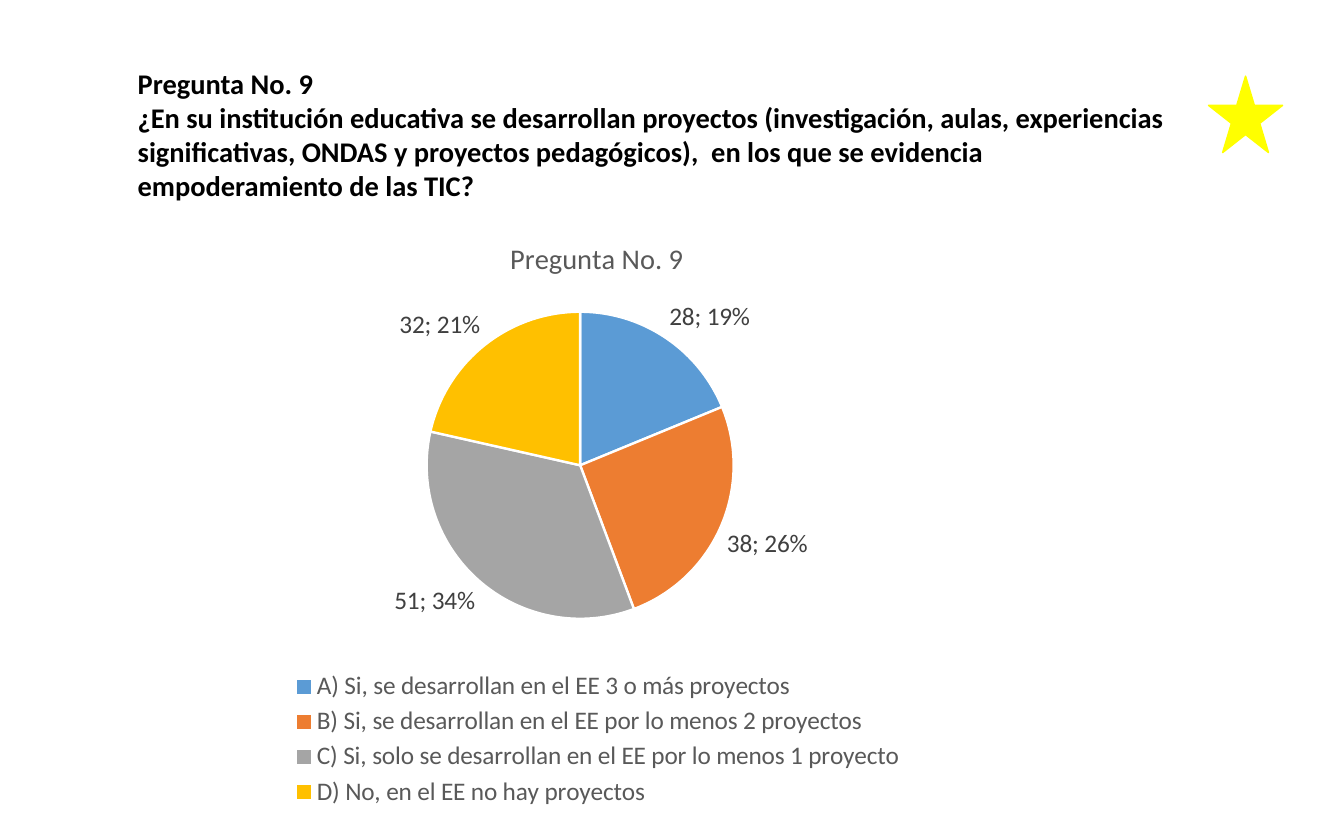
from typing import NamedTuple

import pptx
import pptx.chart.data
import pptx.dml.color
import pptx.enum.chart
import pptx.enum.shapes
import pptx.enum.text
import pptx.oxml
import pptx.oxml.ns
import pptx.util

Inches = pptx.util.Inches
FONT = "Calibri"


class Slice(NamedTuple):
    name: str
    count: int
    color: str


SLICES = [
    Slice("A) Si, se desarrollan en el EE 3 o más proyectos", 28, "5B9BD5"),
    Slice("B) Si, se desarrollan en el EE por lo menos 2 proyectos", 38, "ED7D31"),
    Slice("C) Si, solo se desarrollan en el EE por lo menos 1 proyecto", 51, "A5A5A5"),
    Slice("D) No, en el EE no hay proyectos", 32, "FFC000"),
]
TITLE = [
    "Pregunta No. 9",
    "¿En su institución educativa se desarrollan proyectos (investigación, aulas, "
    "experiencias significativas, ONDAS y proyectos pedagógicos),  en los que se "
    "evidencia empoderamiento de las TIC?",
]


def paint(color_of, color: str) -> None:
    """Fill a shape, point or line with one solid colour."""
    color_of.solid()
    color_of.fore_color.rgb = pptx.dml.color.RGBColor.from_string(color)


def style(font, size: int, color: str, bold: bool = False) -> None:
    font.name, font.size, font.bold = FONT, pptx.util.Pt(size), bold
    paint(font.fill, color)


def place(part, index: int, target: str = "", **spots: float) -> None:
    """Give a chart part a manual layout, in fractions of the chart."""
    for old in part.findall(pptx.oxml.ns.qn("c:layout")):
        part.remove(old)
    inner = f'<c:layoutTarget val="{target}"/>' if target else ""
    modes = '<c:xMode val="edge"/><c:yMode val="edge"/>'
    vals = "".join(f'<c:{key} val="{val}"/>' for key, val in spots.items())
    part.insert(index, pptx.oxml.parse_xml(
        f'<c:layout {pptx.oxml.ns.nsdecls("c")}><c:manualLayout>'
        f"{inner}{modes}{vals}</c:manualLayout></c:layout>"))


def add_title(slide) -> None:
    title = slide.shapes.title
    title.left, title.top = Inches(1.11), Inches(0.53)
    title.width, title.height = Inches(9.37), Inches(1.31)
    frame = title.text_frame
    frame.text = "\n".join(TITLE)
    frame.word_wrap = True
    frame.auto_size = pptx.enum.text.MSO_AUTO_SIZE.NONE
    frame.vertical_anchor = pptx.enum.text.MSO_ANCHOR.TOP
    for para in frame.paragraphs:
        para.alignment = pptx.enum.text.PP_ALIGN.LEFT
        para.line_spacing = 1.0
        para.space_before = pptx.util.Pt(0)
        style(para.font, 18, "000000", True)


def add_pie(slide) -> None:
    data = pptx.chart.data.CategoryChartData()
    data.categories = [part.name for part in SLICES]
    data.add_series("Series 1", [part.count for part in SLICES])
    chart = slide.shapes.add_chart(
        pptx.enum.chart.XL_CHART_TYPE.PIE, Inches(1.33), Inches(1.84),
        Inches(7.77), Inches(5.29), data).chart
    style(chart.font, 10, "000000")

    # Chart title
    chart.has_title = True
    head = chart.chart_title
    head.text_frame.text = "Pregunta No. 9"
    style(head.text_frame.paragraphs[0].font, 18, "595959")
    place(head._element, 1, x=0.4, y=0.04)

    # Legend
    chart.has_legend = True
    legend = chart.legend
    legend.position = pptx.enum.chart.XL_LEGEND_POSITION.BOTTOM
    legend.include_in_layout = False
    style(legend.font, 16, "595959")
    place(legend._element, 1, x=0.15, y=0.76, w=0.71, h=0.24)

    # Slices
    plot = chart.plots[0]
    plot.vary_by_categories = True
    series = plot.series[0]
    for index, part in enumerate(SLICES):
        form = series.points[index].format
        paint(form.fill, part.color)
        paint(form.line.fill, "FFFFFF")
        form.line.width = pptx.util.Pt(1.5)
    place(plot._element.getparent(), 0, "inner", x=0.31, y=0.17, w=0.35, h=0.51)

    # Labels
    labels = series.data_labels
    labels.show_value = labels.show_percentage = True
    labels.position = pptx.enum.chart.XL_LABEL_POSITION.OUTSIDE_END
    style(labels.font, 16, "404040")
    last = labels._element.find(pptx.oxml.ns.qn("c:showBubbleSize"))
    last.addnext(pptx.oxml.parse_xml(
        f'<c:separator {pptx.oxml.ns.nsdecls("c")}>; </c:separator>'))


def add_star(slide) -> None:
    star = slide.shapes.add_shape(
        pptx.enum.shapes.MSO_SHAPE.STAR_5_POINT,
        Inches(10.62), Inches(0.67), Inches(0.65), Inches(0.67))
    star.shadow.inherit = False
    paint(star.fill, "FFFF00")
    paint(star.line.fill, "FFFF00")
    star.line.width = pptx.util.Pt(1)


def main() -> None:
    deck = pptx.Presentation()
    deck.slide_width, deck.slide_height = Inches(11.81), Inches(7.38)
    slide = deck.slides.add_slide(deck.slide_layouts.get_by_name("Title Only"))
    paint(slide.background.fill, "FFFFFF")
    add_title(slide)
    add_pie(slide)
    add_star(slide)
    deck.save("out.pptx")


if __name__ == "__main__":
    main()
